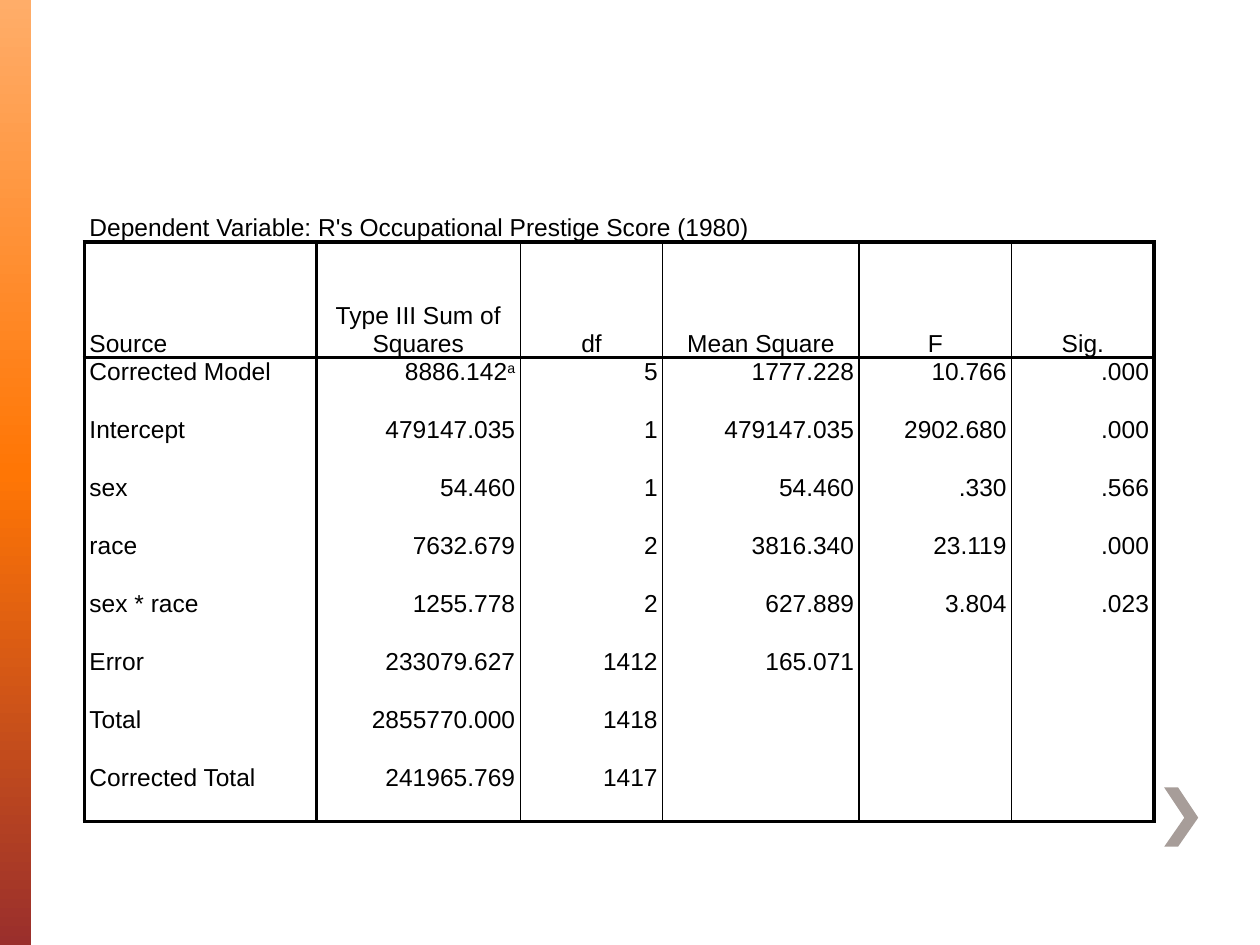
import copy
from dataclasses import dataclass

import pptx
import pptx.dml.color
import pptx.enum.shapes
import pptx.enum.text
import pptx.oxml
import pptx.oxml.ns
import pptx.util
from pptx.dml.color import RGBColor
from pptx.util import Inches

BLACK = RGBColor(0x00, 0x00, 0x00)
WHITE = RGBColor(0xFF, 0xFF, 0xFF)
LIGHT_ORANGE = RGBColor(0xFF, 0xAD, 0x69)
ORANGE = RGBColor(0xFF, 0x76, 0x05)
DARK_RED = RGBColor(0x9A, 0x2F, 0x2C)
GREY = RGBColor(0xA7, 0x9D, 0x99)

THICK, THIN = 2.25, 1
PADDING = Inches(0.04)
LEFT, CENTER, RIGHT = (
    pptx.enum.text.PP_ALIGN.LEFT,
    pptx.enum.text.PP_ALIGN.CENTER,
    pptx.enum.text.PP_ALIGN.RIGHT,
)

CAPTION = "Dependent Variable: R's Occupational Prestige Score (1980)"
CAPTION_ROW, HEADER_ROW = 1, 2


@dataclass
class Column:
    heading: str
    width: float


@dataclass
class Effect:
    source: str
    values: tuple[str, ...]
    note: str = ""


COLUMNS = [
    Column("Source", 1.84),
    Column("Type III Sum of Squares", 1.62),
    Column("df", 1.13),
    Column("Mean Square", 1.56),
    Column("F", 1.21),
    Column("Sig.", 1.13),
]
EFFECTS = [
    Effect("Corrected Model", ("8886.142", "5", "1777.228", "10.766", ".000"), "a"),
    Effect("Intercept", ("479147.035", "1", "479147.035", "2902.680", ".000")),
    Effect("sex", ("54.460", "1", "54.460", ".330", ".566")),
    Effect("race", ("7632.679", "2", "3816.340", "23.119", ".000")),
    Effect("sex * race", ("1255.778", "2", "627.889", "3.804", ".023")),
    Effect("Error", ("233079.627", "1412", "165.071")),
    Effect("Total", ("2855770.000", "1418")),
    Effect("Corrected Total", ("241965.769", "1417")),
]
LAST_ROW = HEADER_ROW + len(EFFECTS)
LAST_COLUMN = len(COLUMNS) - 1


def add_side_bar(slide) -> None:
    bar = slide.shapes.add_shape(
        pptx.enum.shapes.MSO_SHAPE.RECTANGLE, 0, 0, Inches(0.25), Inches(7.5)
    )
    bar.shadow.inherit = False
    bar.line.fill.background()
    bar.fill.gradient()
    bar.fill.gradient_angle = 270
    first_stop = bar._element.spPr.find(".//" + pptx.oxml.ns.qn("a:gs"))
    first_stop.addnext(copy.deepcopy(first_stop))
    colours = (LIGHT_ORANGE, ORANGE, DARK_RED)
    for stop, colour, position in zip(bar.fill.gradient_stops, colours, (0, 0.5, 1)):
        stop.color.rgb = colour
        stop.position = position


def add_chevron(slide) -> None:
    points = [(9.35, 6.25), (9.24, 6.25), (9.4, 6.49), (9.24, 6.72), (9.35, 6.72), (9.51, 6.49)]
    corners = [(Inches(x), Inches(y)) for x, y in points]
    builder = slide.shapes.build_freeform(*corners[0])
    builder.add_line_segments(corners[1:], close=True)
    chevron = builder.convert_to_shape()
    chevron.shadow.inherit = False
    chevron.fill.solid()
    chevron.fill.fore_color.rgb = GREY
    chevron.line.fill.background()


def border_widths(row: int, column: int) -> dict[str, float]:
    """Widths in points of a cell's left, right, top and bottom borders."""
    in_grid = row >= HEADER_ROW
    return {
        "L": (THICK if column <= 1 else THIN) if in_grid else 0,
        "R": (THICK if column in (0, LAST_COLUMN) else THIN) if in_grid else 0,
        "T": THICK if row in (HEADER_ROW, HEADER_ROW + 1) else 0,
        "B": THICK if row in (CAPTION_ROW, HEADER_ROW, LAST_ROW) else 0,
    }


def format_cell(cell, row: int, column: int) -> None:
    properties = cell._tc.get_or_add_tcPr()
    for side, width in border_widths(row, column).items():
        fill = f'<a:solidFill><a:srgbClr val="{BLACK}"/></a:solidFill>' if width else "<a:noFill/>"
        properties.append(pptx.oxml.parse_xml(
            f'<a:ln{side} {pptx.oxml.ns.nsdecls("a")} w="{pptx.util.Pt(width)}">{fill}</a:ln{side}>'
        ))
    cell.fill.solid()
    cell.fill.fore_color.rgb = WHITE
    cell.margin_left = cell.margin_right = cell.margin_top = cell.margin_bottom = 0


def write_cell(cell, text: str, alignment, note: str = "") -> None:
    paragraph = cell.text_frame.paragraphs[0]
    paragraph.add_run().text = text
    if note:
        superscript = paragraph.add_run()
        superscript.text = note
        superscript._r.get_or_add_rPr().set("baseline", "30000")
    properties = paragraph._p.get_or_add_pPr()
    for margin in ("marL", "marR"):
        properties.set(margin, str(PADDING))
    properties.set("indent", "0")
    paragraph.alignment = alignment
    paragraph.line_spacing = pptx.util.Pt(16)
    paragraph.font.size = pptx.util.Pt(14)
    paragraph.font.name = "Arial"
    paragraph.font.color.rgb = BLACK


def add_effects_table(slide) -> None:
    table = slide.shapes.add_table(
        LAST_ROW + 1, len(COLUMNS), Inches(0.67), Inches(1), Inches(8.5), Inches(5.5)
    ).table
    table.first_row = table.horz_banding = False
    for table_column, column in zip(table.columns, COLUMNS):
        table_column.width = Inches(column.width)
    for index, table_row in enumerate(table.rows):
        table_row.height = Inches(0.92 if index == HEADER_ROW else 0.46)
        for column_index, cell in enumerate(table_row.cells):
            format_cell(cell, index, column_index)

    # Blank band and caption, each across the full width
    for index in (0, CAPTION_ROW):
        table.cell(index, 0).merge(table.cell(index, LAST_COLUMN))
    caption = table.cell(CAPTION_ROW, 0)
    caption.vertical_anchor = pptx.enum.text.MSO_ANCHOR.BOTTOM
    write_cell(caption, CAPTION, LEFT)

    # Headings
    for index, column in enumerate(COLUMNS):
        cell = table.cell(HEADER_ROW, index)
        cell.vertical_anchor = pptx.enum.text.MSO_ANCHOR.BOTTOM
        write_cell(cell, column.heading, CENTER if index else LEFT)

    # Effects
    for index, effect in enumerate(EFFECTS, HEADER_ROW + 1):
        write_cell(table.cell(index, 0), effect.source, LEFT)
        for column_index, value in enumerate(effect.values, 1):
            note = effect.note if column_index == 1 else ""
            write_cell(table.cell(index, column_index), value, RIGHT, note)


def main() -> None:
    presentation = pptx.Presentation()
    presentation.slide_width = Inches(10)
    presentation.slide_height = Inches(7.5)
    slide = presentation.slides.add_slide(presentation.slide_layouts[6])
    add_side_bar(slide)
    add_chevron(slide)
    add_effects_table(slide)
    presentation.save("out.pptx")


if __name__ == "__main__":
    main()
